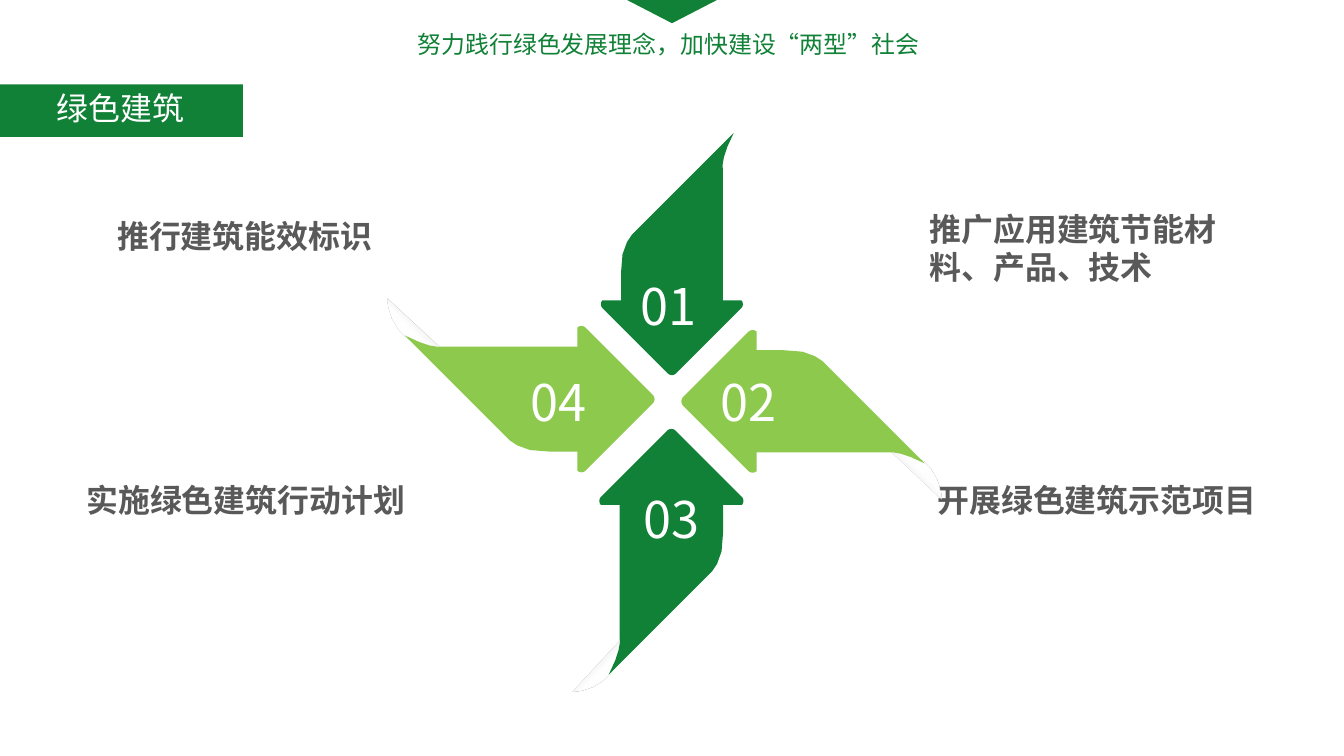
from lxml import etree
from pptx import Presentation
from pptx.dml.color import RGBColor
from pptx.enum.shapes import MSO_SHAPE
from pptx.enum.text import MSO_AUTO_SIZE, PP_ALIGN
from pptx.oxml.ns import qn
from pptx.util import Pt

RECT, TRI = MSO_SHAPE.RECTANGLE, MSO_SHAPE.ISOSCELES_TRIANGLE
GROW = MSO_AUTO_SIZE.SHAPE_TO_FIT_TEXT
LEFT, MID = PP_ALIGN.LEFT, PP_ALIGN.CENTER

THEME = {
    "font": "Noto Sans CJK SC",
    "dark": "108136", "light": "8CC94C", "gray": "595959", "white": "FFFFFF",
    "fold": [("B0B0B0", 0, 76), ("FFFFFF", 0.59, 73)],
    "label": {"size": Pt(24), "bold": True},
    "head": {"size": Pt(24)},
    "motto": {"size": Pt(18)},
    "number": {"size": Pt(38)},
}

SIZE = (1012.5, 569.5)
LABELS = [
    ("推行建筑能效标识", (81.2, 160, 239, 36)),
    ("推广应用建筑节能材料、产品、技术", (693.3, 154, 239, 65.5)),
    ("实施绿色建筑行动计划", (58, 358.5, 258, 36)),
    ("开展绿色建筑示范项目", (699.2, 358.5, 266.4, 36)),
]
MOTTO = ("努力践行绿色发展理念，加快建设“两型”社会", (217.3, 18.6, 572.5, 29))
HEAD = ("绿色建筑", (35.7, 63.5, 160.5, 36))
BAR = (0, 63.5, 183, 39.6)
NOTCH = (469.5, -1.5, 73.5, 19)

# number, tip, outward direction, scale, colour, fold angle, number corner
BLADES = [
    ("04", (493.5, 300.7), (-1, 0), 1, "light", 225, (392.2, 276.2)),
    ("02", (512.9, 302.4), (1, 0), 0.975, "light", 45, (535.5, 276.2)),
    ("01", (506.2, 283), (0, -1), 0.97, "dark", None, (475.7, 204)),
    ("03", (505.8, 322.7), (0, 1), 0.985, "dark", 315, (478, 363.8)),
]
BLADE = [
    [(52.5, 54)], [(1.5, 3)], [(0, 1), (0, -1), (1.5, -3)],
    [(52.5, -54)], [(54, -55.5), (57, -55.5), (58.5, -54)],
    [(58.5, -39.5)], [(160.5, -39.5)],
    [(164, -39), (172, -39.5), (188.5, -48)],
    [(111, 29.5)], [(111, 29.5), (102, 40.5), (80, 39.5)],
    [(58.5, 39.5)], [(58.5, 54)], [(57, 55.5), (54, 55.5), (52.5, 54)],
]
FOLD = [
    [(161, -38)], [(201.5, -75.5)],
    [(201.5, -75.5), (201.5, -62.5), (193, -52)],
    [(187, -44), (178, -39), (161, -38)],
]
STEPS = 4


def color(name):
    return RGBColor.from_string(THEME[name])


def plain(shape, name):
    shape.shadow.inherit = False
    shape.line.fill.background()
    shape.fill.solid()
    shape.fill.fore_color.rgb = color(name)


def block(kind, box, name, turn=0):
    shape = shapes.add_shape(kind, *map(Pt, box))
    shape.rotation = turn
    plain(shape, name)


def write(text, box, style, name, align=LEFT, wrap=True):
    frame = shapes.add_textbox(*map(Pt, box)).text_frame
    frame.word_wrap = wrap
    frame.auto_size = GROW
    line = frame.paragraphs[0]
    line.alignment = align
    run = line.add_run()
    run.text = text
    for key, value in {"name": THEME["font"], **THEME[style]}.items():
        setattr(run.font, key, value)
    run.font.color.rgb = color(name)
    east = etree.SubElement(run.font._element, qn("a:ea"))
    east.set("typeface", THEME["font"])


def trace(parts):
    dots = []
    for part in parts:
        if len(part) == 1:
            dots += part
            continue
        a, (b, c, d) = dots[-1], part
        for step in range(1, STEPS + 1):
            t = step / STEPS
            s = 1 - t
            mix = (s ** 3, 3 * s * s * t, 3 * s * t * t, t ** 3)
            dots.append(tuple(sum(m * p[i] for m, p in zip(mix, (a, b, c, d)))
                              for i in (0, 1)))
    return dots


def draw(parts, tip, out, scale, name):
    (x, y), (dx, dy) = tip, out
    dots = [(Pt(x + scale * (u * dx + v * dy)), Pt(y + scale * (u * dy - v * dx)))
            for u, v in trace(parts)]
    pen = shapes.build_freeform(*dots[0])
    pen.add_line_segments(dots[1:-1], close=True)
    shape = pen.convert_to_shape()
    plain(shape, name)
    return shape


def shade(shape, angle):
    shape.fill.gradient()
    shape.fill.gradient_angle = angle
    for stop, (tone, place, alpha) in zip(shape.fill.gradient_stops, THEME["fold"]):
        stop.color.rgb = RGBColor.from_string(tone)
        stop.position = place
        node = stop._gs.find(qn("a:srgbClr"))
        etree.SubElement(node, qn("a:alpha")).set("val", str(alpha * 1000))


deck = Presentation()
deck.slide_width, deck.slide_height = map(Pt, SIZE)
shapes = deck.slides.add_slide(deck.slide_layouts[6]).shapes

for text, box in LABELS:
    write(text, box, "label", "gray")
block(TRI, NOTCH, "dark", 180)
write(*MOTTO, "motto", "dark", MID)

for number, tip, out, scale, name, angle, corner in BLADES:
    if angle is not None:
        shade(draw(FOLD, tip, out, scale, "white"), angle)
    draw(BLADE, tip, out, scale, name)

for number, *_, corner in BLADES:
    write(number, (*corner, 62, 53.5), "number", "white", wrap=False)

block(RECT, BAR, "dark")
write(*HEAD, "head", "white")
deck.save("out.pptx")
